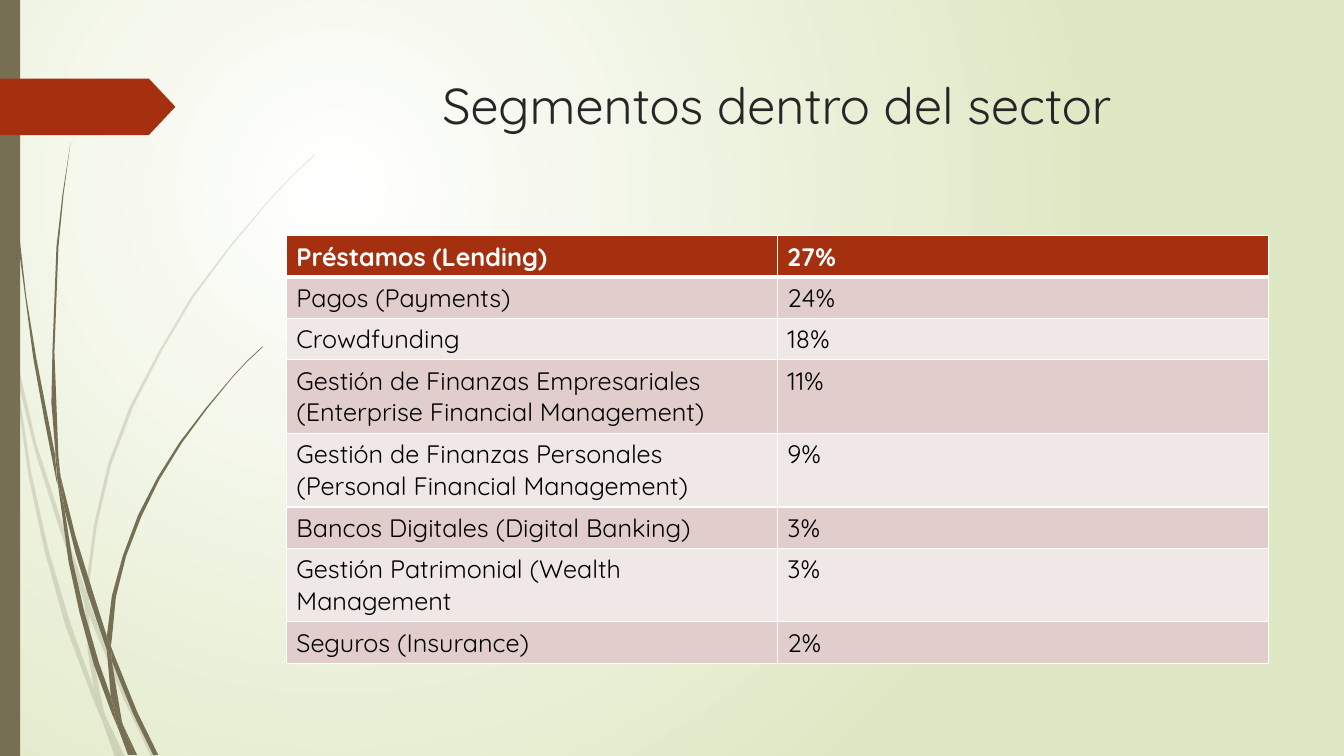
from lxml.etree import SubElement
from pptx import Presentation
from pptx.dml.color import RGBColor
from pptx.enum.shapes import MSO_SHAPE
from pptx.enum.text import PP_ALIGN
from pptx.oxml.ns import qn
from pptx.util import Emu, Inches, Pt

COLS, ROWS = 1333, 750
UNIT = Inches(0.01)
LINE_ROWS = {1: 41, 2: 73}
FONT = "Quicksand"
OLIVE, RUST, WHITE = "766F54", "A53010", "FFFFFF"
BANDS = ("F0E8E7", "E1CDCC")

SEGMENTS = [
    ("Préstamos (Lending)", "27%", 1),
    ("Pagos (Payments)", "24%", 1),
    ("Crowdfunding", "18%", 1),
    ("Gestión de Finanzas Empresariales (Enterprise Financial Management)", "11%", 2),
    ("Gestión de Finanzas Personales (Personal Financial Management)", "9%", 2),
    ("Bancos Digitales (Digital Banking)", "3%", 1),
    ("Gestión Patrimonial (Wealth Management", "3%", 2),
    ("Seguros (Insurance)", "2%", 1),
]

PALE_GRASS = [
    [(11, 350), (9, 322), (0, 282), (0, 299), (10, 344)],
    [(58, 522), (84, 599), (85, 586), (62, 520), (36, 440), (14, 345), (17, 376),
     (35, 449)],
    [(92, 607), (88, 596), (88, 610), (123, 694), (150, 751), (155, 751), (127, 692)],
    [(119, 751), (124, 751), (105, 711)],
    [(93, 683), (70, 619), (48, 545), (31, 469), (17, 376), (11, 350), (28, 470),
     (44, 546), (65, 621), (92, 693), (101, 714), (99, 707)],
    [(84, 599), (87, 646), (93, 683), (96, 692), (105, 711), (103, 706), (91, 646),
     (88, 610), (88, 608)],
    [(88, 584), (96, 522), (110, 462), (132, 404), (160, 349), (192, 295),
     (229, 245), (268, 198), (290, 175), (312, 154), (312, 153), (289, 175),
     (268, 197), (228, 244), (190, 294), (158, 348), (129, 403), (107, 461),
     (93, 522), (85, 584), (85, 586), (88, 596)],
    [(101, 714), (114, 751), (119, 751)],
    [(88, 608), (88, 596), (85, 586), (84, 599)],
    [(96, 692), (93, 683), (99, 707), (101, 714), (119, 751), (105, 711)],
]
DARK_GRASS = [
    [(7, 110), (17, 233), (33, 355), (44, 416), (56, 477), (57, 481), (55, 457),
     (55, 453), (36, 355), (26, 294), (19, 232), (8, 109), (5, 48), (4, 0), (3, 0),
     (4, 48)],
    [(88, 592), (106, 645), (106, 631), (93, 590), (75, 532), (60, 472), (64, 505),
     (75, 549)],
    [(113, 649), (110, 641), (111, 656), (132, 708), (152, 749), (157, 749),
     (136, 706)],
    [(110, 691), (98, 657), (84, 608), (72, 556), (64, 505), (57, 477), (68, 557),
     (79, 608), (93, 659), (111, 708), (117, 722), (116, 717)],
    [(60, 472), (58, 453), (54, 349), (58, 245), (63, 193), (70, 141), (62, 193),
     (56, 245), (52, 349), (51, 400), (55, 449)],
    [(133, 749), (136, 749), (122, 719)],
    [(57, 477), (64, 505), (60, 472), (55, 449), (55, 453)],
    [(111, 633), (115, 592), (125, 552), (140, 513), (158, 476), (180, 440),
     (205, 406), (231, 374), (245, 359), (261, 344), (260, 344), (245, 358),
     (231, 373), (204, 405), (178, 439), (156, 474), (137, 511), (122, 551),
     (111, 591), (106, 631), (110, 641)],
    [(117, 722), (127, 749), (131, 749)],
    [(106, 645), (110, 691), (116, 706), (122, 719), (121, 716), (111, 656), (109, 651)],
    [(106, 645), (109, 651), (111, 656), (110, 641), (106, 631)],
    [(116, 706), (110, 691), (116, 717), (117, 722), (130, 749), (133, 749), (122, 719)],
]


def rgb(value):
    """Turn a hex string into a colour."""
    return RGBColor.from_string(value)


def grid(*cells):
    """Turn grid counts into lengths."""
    return [Emu(round(cell * UNIT)) for cell in cells]


def paint(sp, color, alpha=100):
    """Give a shape a plain fill without line or shadow."""
    sp.shadow.inherit = False
    sp.line.fill.background()
    sp.fill.solid()
    sp.fill.fore_color.rgb = rgb(color)
    if alpha < 100:
        clr = sp.element.spPr.find(qn("a:solidFill")).find(qn("a:srgbClr"))
        SubElement(clr, qn("a:alpha"), val=str(alpha * 1000))


def style(p, size, color, bold=False):
    """Set the font of a paragraph."""
    p.font.name, p.font.size, p.font.bold = FONT, Pt(size), bold
    p.font.color.rgb = rgb(color)


def add_grass(s, pieces, alpha=100):
    """Draw the outlined pieces of a tuft of grass."""
    for piece in pieces:
        outline = [grid(*point) for point in piece]
        builder = s.shapes.build_freeform(*outline[0], scale=1.0)
        builder.add_line_segments(outline[1:], close=True)
        paint(builder.convert_to_shape(), OLIVE, alpha)


def add_block(s, kind, box, color):
    """Add a plain preset shape."""
    sp = s.shapes.add_shape(kind, *grid(*box))
    paint(sp, color)
    return sp


def add_title(s, text, box):
    """Add the centred heading."""
    tf = s.shapes.add_textbox(*grid(*box)).text_frame
    tf.word_wrap = True
    p = tf.paragraphs[0]
    p.text, p.alignment = text, PP_ALIGN.CENTER
    style(p, 36, "262626")


def add_border(cell, side, width):
    """Draw one white edge of a cell."""
    props = cell._tc.get_or_add_tcPr()
    ln = SubElement(props, qn(f"a:{side}"), w=str(Pt(width)))
    SubElement(SubElement(ln, qn("a:solidFill")), qn("a:srgbClr"), val=WHITE)


def add_segments(s, left, top, width):
    """Add the table of segments and their shares."""
    heights = [LINE_ROWS[lines] for *_, lines in SEGMENTS]
    box = grid(left, top, width, sum(heights))
    table = s.shapes.add_table(len(SEGMENTS), 2, *box).table
    for i, (name, share, _) in enumerate(SEGMENTS):
        head = i == 0
        table.rows[i].height = grid(heights[i])[0]
        for j, text in enumerate((name, share)):
            cell = table.cell(i, j)
            for side in ("lnL", "lnR", "lnT", "lnB"):
                thick = (head and side == "lnB") or (i == 1 and side == "lnT")
                add_border(cell, side, 3 if thick else 1)
            cell.fill.solid()
            cell.fill.fore_color.rgb = rgb(RUST if head else BANDS[i % 2])
            p = cell.text_frame.paragraphs[0]
            p.text = text
            style(p, 18, WHITE if head else "000000", head)


def set_background(s):
    """Spread a circular gradient over the slide."""
    fill = s.background.fill
    fill.gradient()
    for stop, color in zip(fill.gradient_stops, (WHITE, "DFE8C4")):
        stop.color.rgb = rgb(color)
    grad = next(s.element.iter(qn("a:gradFill")))
    grad.remove(grad.find(qn("a:lin")))
    circle = SubElement(grad, qn("a:path"), path="circle")
    SubElement(circle, qn("a:fillToRect"),
               l="50000", t="50000", r="100000", b="100000")


def main():
    """Build the slide and save it."""
    prs = Presentation()
    prs.slide_width, prs.slide_height = grid(COLS, ROWS)
    s = prs.slides.add_slide(prs.slide_layouts[6])
    set_background(s)
    add_grass(s, PALE_GRASS, alpha=20)
    add_grass(s, DARK_GRASS)
    add_block(s, MSO_SHAPE.RECTANGLE, (0, 0, 20, ROWS), OLIVE)
    arrow = add_block(s, MSO_SHAPE.PENTAGON, (0, 78, 174, 56), RUST)
    arrow.adjustments[0] = 0.47
    add_title(s, "Segmentos dentro del sector", (283, 69, 975, 140))
    add_segments(s, 284, 234, 974)
    prs.save("out.pptx")


if __name__ == "__main__":
    main()
